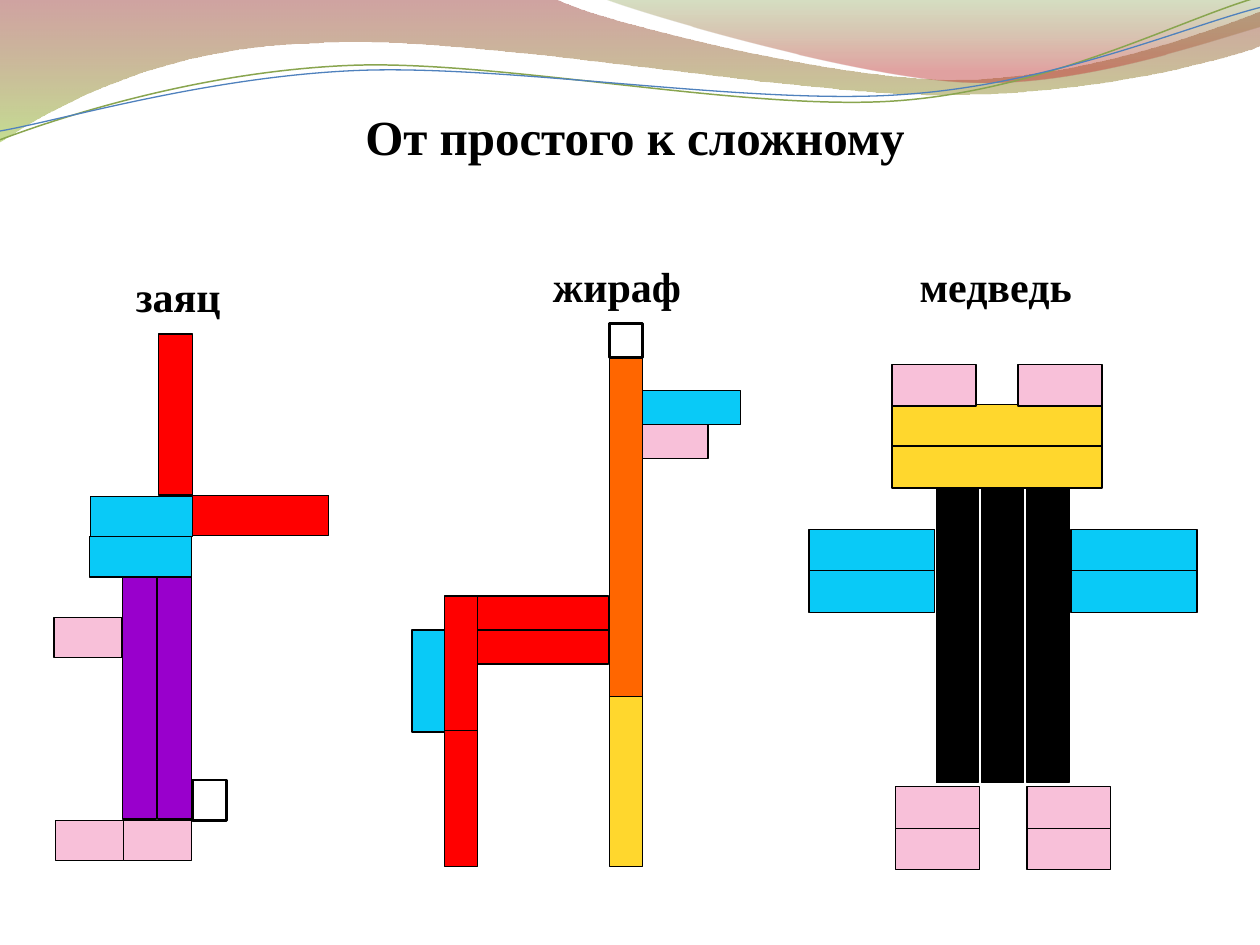
from math import cos, radians, sin

from lxml import etree
from pptx import Presentation, util as u
from pptx.dml.color import RGBColor
from pptx.enum import shapes, text
from pptx.oxml.ns import qn

FONT = "Times New Roman"
BLACK = RGBColor(0, 0, 0)
WHITE = RGBColor(255, 255, 255)
PINK = RGBColor(0xF8, 0xC0, 0xD9)
BLUE = RGBColor(0x09, 0xCA, 0xF7)
RED = RGBColor(255, 0, 0)
YELLOW = RGBColor(0xFF, 0xD7, 0x2D)
VIOLET = RGBColor(0x99, 0, 0xCC)
ORANGE = RGBColor(0xFF, 0x66, 0)
MAROON = RGBColor(0x97, 0x33, 0x30)
LIME = RGBColor(0x95, 0xC2, 0x38)
OLIVE = RGBColor(0x76, 0x95, 0x37)
BRICK = RGBColor(0xBE, 0x33, 0x30)
GREEN = RGBColor(0x89, 0xA5, 0x4F)
STEEL = RGBColor(0x4F, 0x81, 0xBD)

UNITS = {WHITE: 1, PINK: 2, BLUE: 3, RED: 4, YELLOW: 5,
         VIOLET: 6, BLACK: 7, ORANGE: 10}

HARE = [
    (RED, "h", 1.53, 3.93), (RED, "v", 1.26, 2.65),
    (BLUE, "h", 0.72, 3.94), (BLUE, "h", 0.71, 4.26),
    (VIOLET, "v", 0.97, 4.58), (VIOLET, "v", 1.25, 4.58),
    (PINK, "h", 0.44, 6.51), (PINK, "h", 0.98, 6.51),
    (PINK, "h", 0.43, 4.9), (WHITE, "v", 1.53, 6.19),
]
GIRAFFE = [
    (RED, "v", 3.53, 4.73), (RED, "h", 3.79, 4.73),
    (RED, "h", 3.79, 5), (RED, "v", 3.53, 5.8),
    (ORANGE, "v", 4.84, 2.84), (WHITE, "v", 4.84, 2.57),
    (YELLOW, "v", 4.84, 5.53), (BLUE, "h", 5.1, 3.1),
    (BLUE, "v", 3.27, 5), (PINK, "h", 5.1, 3.37),
]
BEAR = (
    [(BLACK, "v", x, 3.88) for x in (7.43, 7.79, 8.15)]
    + [(YELLOW, "h", 7.08, y) for y in (3.21, 3.54)]
    + [(BLUE, "h", x, y) for x in (8.5, 6.42) for y in (4.2, 4.53)]
    + [(PINK, "h", x, y) for y in (6.57, 6.24) for x in (8.15, 7.11)]
    + [(PINK, "h", x, 2.89) for x in (8.08, 7.08)]
)
ANIMALS = [
    ("заяц", (0.98, 2.1, 0.88, 0.5), (0.27, 0.32), HARE),
    ("жираф", (4.29, 2.02, 1.23, 0.5), (0.26, 0.27), GIRAFFE),
    ("медведь", (7.2, 2.02, 1.42, 0.5), (1 / 3, 1 / 3), BEAR),
]

BANDS = [
    ([(0, 0), (4.4, -0.01),
      (4.76, 0.17, 6.64, 0.63, 7.58, 0.63),
      (8.53, 0.63, 9.58, 0.26, 10, 0.09), (10.01, 0.36),
      (9.83, 0.44, 8.7, 0.76, 7.46, 0.75),
      (6.22, 0.75, 3.82, 0.28, 2.57, 0.34),
      (1.29, 0.36, 0.46, 0.83, -0.01, 1.13), (0, 0)],
     [(0, MAROON, 45), (1, LIME, 55)]),
    ([(4.79, -0.01),
      (5.09, 0.11, 6.82, 0.62, 7.69, 0.65),
      (8.56, 0.69, 9.61, 0.32, 10, 0.21), (10, 0), (4.79, -0.01)],
     [(0, OLIVE, 30), (0.8, BRICK, 45)]),
]
WAVES = [
    ([(0, 1.11), (0.48, 0.93, 1.58, 0.57, 2.77, 0.52),
      (3.95, 0.47, 5.93, 0.89, 7.13, 0.8),
      (8.33, 0.71, 9.38, 0.15, 9.98, -0.02)], GREEN, 0.85),
    ([(0, 1.04), (0.47, 0.96, 1.64, 0.61, 2.83, 0.56),
      (4.03, 0.51, 5.97, 0.84, 7.17, 0.75),
      (8.36, 0.67, 9.41, 0.21, 10, 0.06)], STEEL, 0.75),
]
TILT = 2.7
PIVOT = (5, 0.58)


def turn(dot, angle):
    c, s = cos(radians(angle)), sin(radians(angle))
    x, y = dot[0] - PIVOT[0], dot[1] - PIVOT[1]
    return PIVOT[0] + x * c - y * s, PIVOT[1] + x * s + y * c


def draw(slide, parts, close, angle=0):
    dots = [turn(part[i:i + 2], angle)
            for part in parts for i in range(0, len(part), 2)]
    dots = [(u.Inches(x), u.Inches(y)) for x, y in dots]
    pen = slide.shapes.build_freeform(*dots[0], scale=1)
    pen.add_line_segments(dots[1:], close=close)
    shape = pen.convert_to_shape()
    lines = iter(list(shape._element.iter(qn("a:lnTo"))))
    for part in parts[1:]:
        line = next(lines)
        if len(part) == 6:
            line.tag = qn("a:cubicBezTo")
            for _ in range(2):
                extra = next(lines)
                line.append(extra[0])
                extra.getparent().remove(extra)
    shape.rotation = -angle % 360
    shape.shadow.inherit = False
    return shape


def band(slide, parts, stops):
    shape = draw(slide, parts, True)
    shape.line.fill.background()
    shape.fill.gradient()
    shape.fill.gradient_angle = 270
    for stop, (place, tone, _) in zip(shape.fill.gradient_stops, stops):
        stop.position = place
        stop.color.rgb = tone
    tones = shape._element.spPr.iter(qn("a:srgbClr"))
    for node, (_, _, alpha) in zip(tones, stops):
        etree.SubElement(node, qn("a:alpha"), val=str(alpha * 1000))


def wave(slide, parts, tone, width):
    shape = draw(slide, parts, False, TILT)
    shape.fill.background()
    shape.line.color.rgb = tone
    shape.line.width = u.Pt(width)


def rod(slide, unit, tone, way, x, y):
    count = UNITS[tone]
    w, h = unit
    if way == "h":
        w *= count
    else:
        h *= count
    shape = slide.shapes.add_shape(shapes.MSO_SHAPE.RECTANGLE,
                                   *map(u.Inches, (x, y, w, h)))
    shape.shadow.inherit = False
    shape.fill.solid()
    shape.fill.fore_color.rgb = tone
    shape.line.color.rgb = BLACK
    shape.line.width = u.Pt(1.5 if tone == WHITE else 0.75)


def write(shape, words, size=24, align=text.PP_ALIGN.LEFT, wrap=False):
    frame = shape.text_frame
    frame.text = words
    frame.word_wrap = wrap
    para = frame.paragraphs[0]
    para.alignment = align
    font = para.runs[0].font
    font.name, font.size, font.bold = FONT, u.Pt(size), True
    font.color.rgb = BLACK
    return frame


def main():
    deck = Presentation()
    deck.slide_width, deck.slide_height = u.Inches(10), u.Inches(7.5)
    slide = deck.slides.add_slide(deck.slide_layouts[5])
    for parts, stops in BANDS:
        band(slide, parts, stops)
    for item in WAVES:
        wave(slide, *item)
    for _, _, unit, rods in ANIMALS:
        for item in rods:
            rod(slide, unit, *item)
    for name, box, _, _ in ANIMALS:
        write(slide.shapes.add_textbox(*map(u.Inches, box)), name)

    title = slide.shapes.title
    title.left, title.top, title.width, title.height = map(
        u.Inches, (0.5, 0.77, 9.08, 0.54))
    frame = write(title, "От простого к сложному", size=28,
                  align=text.PP_ALIGN.CENTER, wrap=True)
    frame.auto_size = text.MSO_AUTO_SIZE.NONE
    frame.vertical_anchor = text.MSO_ANCHOR.BOTTOM
    frame.margin_left = frame.margin_right = frame.margin_bottom = 0
    frame.margin_top = u.Inches(0.05)
    slide.shapes._spTree.append(title._element)
    deck.save("out.pptx")


if __name__ == "__main__":
    main()
